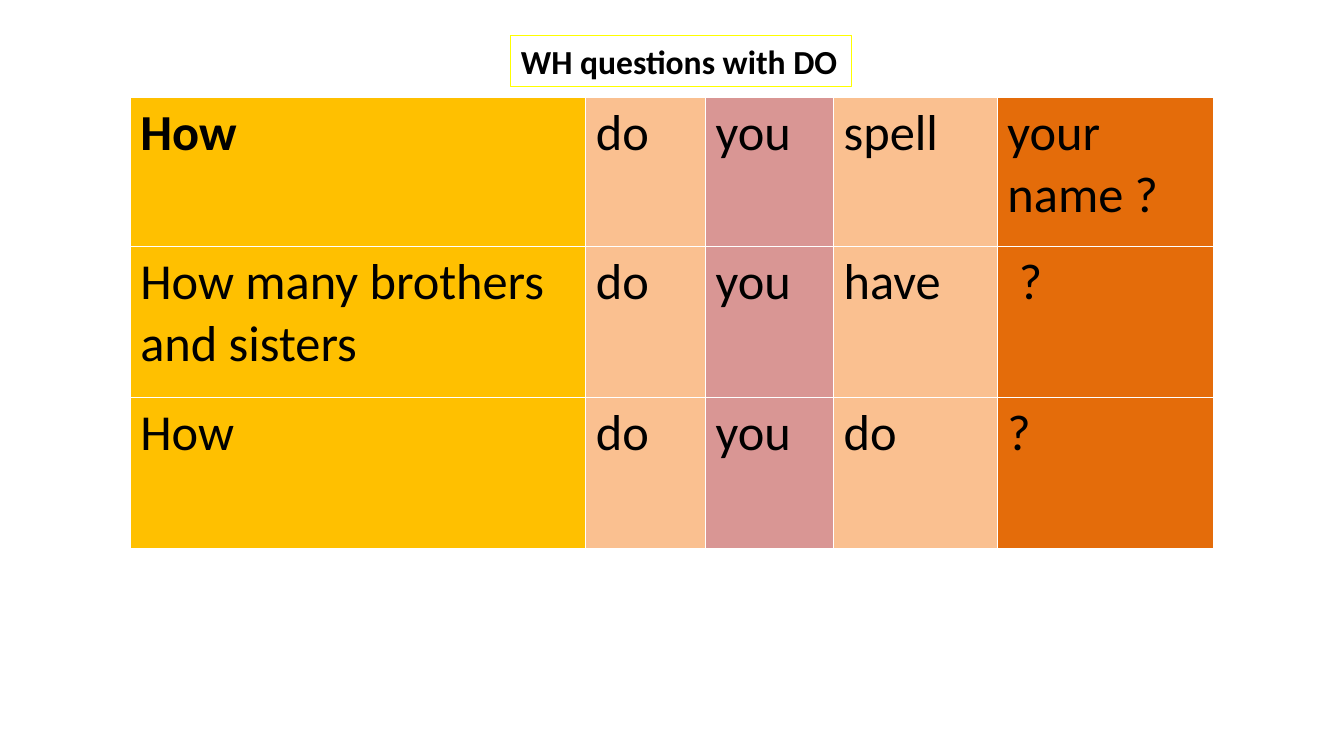
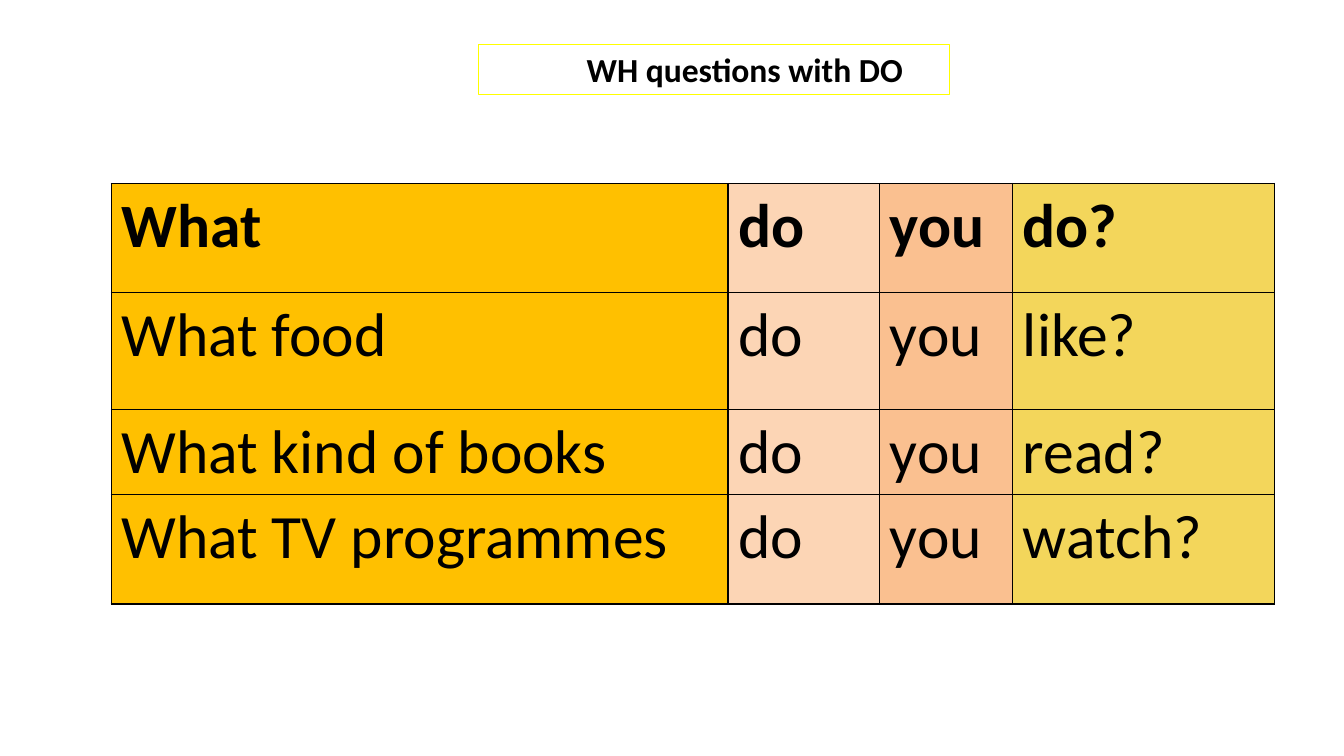
from lxml import etree
from pptx import Presentation
from pptx.dml.color import RGBColor
from pptx.enum.shapes import MSO_SHAPE
from pptx.enum.text import MSO_ANCHOR, PP_ALIGN
from pptx.oxml.ns import qn
from pptx.util import Pt

RECT = MSO_SHAPE.RECTANGLE
MIDDLE, LEFT = MSO_ANCHOR.MIDDLE, PP_ALIGN.LEFT

FONT = "Calibri"
TITLE = "WH questions with DO"
COLORS = {
    "text": "000000",
    "white": "FFFFFF",
    "frame": "FFFF00",
    "amber": "FFC000",
    "peach": "FAC090",
    "pale": "FCD5B5",
    "rose": "D99694",
    "orange": "E46C0A",
    "straw": "F3D65B",
}


def rgb(name):
    return RGBColor.from_string(COLORS[name])


def style_text(p, size, bold):
    p.alignment = LEFT
    p.font.name = FONT
    p.font.size = Pt(size)
    p.font.bold = bold
    p.font.color.rgb = rgb("text")


def add_title(s, box, indent=7.2):
    """Framed title; indent is the space before its text."""
    sp = s.shapes.add_shape(RECT, *map(Pt, box))
    sp.shadow.inherit = False
    sp.fill.background()
    sp.line.color.rgb = rgb("frame")
    sp.line.width = Pt(0.75)
    tf = sp.text_frame
    tf.word_wrap = False
    tf.vertical_anchor = MIDDLE
    tf.margin_left = Pt(indent)
    tf.text = TITLE
    style_text(tf.paragraphs[0], 24, True)


def set_borders(cell, color):
    tc_pr = cell._tc.get_or_add_tcPr()
    # Borders come before the fill in the cell properties
    for i, side in enumerate(("lnL", "lnR", "lnT", "lnB")):
        ln = etree.Element(qn("a:" + side), w=str(Pt(1)))
        fill = etree.SubElement(ln, qn("a:solidFill"))
        etree.SubElement(fill, qn("a:srgbClr"), val=COLORS[color])
        tc_pr.insert(i, ln)


def add_sentences(s, left, top, widths, heights, rows, fills, size, border, bold_cells):
    """Sentence table with one colour for each column."""
    frame = s.shapes.add_table(len(rows), len(widths), Pt(left), Pt(top),
                               Pt(sum(widths)), Pt(sum(heights)))
    table = frame.table
    table.first_row = table.horz_banding = False
    for column, width in zip(table.columns, widths):
        column.width = Pt(width)
    for r, (words, height) in enumerate(zip(rows, heights)):
        table.rows[r].height = Pt(height)
        for c, (word, fill) in enumerate(zip(words, fills)):
            cell = table.cell(r, c)
            cell.text = word
            cell.fill.solid()
            cell.fill.fore_color.rgb = rgb(fill)
            set_borders(cell, border)
            style_text(cell.text_frame.paragraphs[0], size, r == 0 and c < bold_cells)


def how_slide(s):
    add_sentences(
        s, 93, 69.5, [325.5, 85.5, 91.5, 117, 154.5], [106.5, 108, 108],
        [["How", "do", "you", "spell", "your name ?"],
         ["How many brothers and sisters", "do", "you", "have", " ?"],
         ["How", "do", "you", "do", "?"]],
        ["amber", "peach", "rose", "peach", "orange"],
        size=36, border="white", bold_cells=1)
    add_title(s, (365, 25.5, 243.5, 36.4))


def what_slide(s):
    add_sentences(
        s, 79.5, 131, [440.5, 108.5, 95, 187], [78, 83.5, 60.5, 78],
        [["What", "do", "you", "do?"],
         ["What food", "do", "you", "like?"],
         ["What kind of books", "do", "you", "read?"],
         ["What TV programmes", "do", "you", "watch?"]],
        ["amber", "pale", "peach", "straw"],
        size=44, border="text", bold_cells=4)
    add_title(s, (342, 31.5, 336, 36.4), indent=77)


def main():
    prs = Presentation()
    prs.slide_width, prs.slide_height = Pt(960), Pt(540)
    for build in (how_slide, what_slide):
        build(prs.slides.add_slide(prs.slide_layouts[6]))
    prs.save("out.pptx")


if __name__ == "__main__":
    main()
